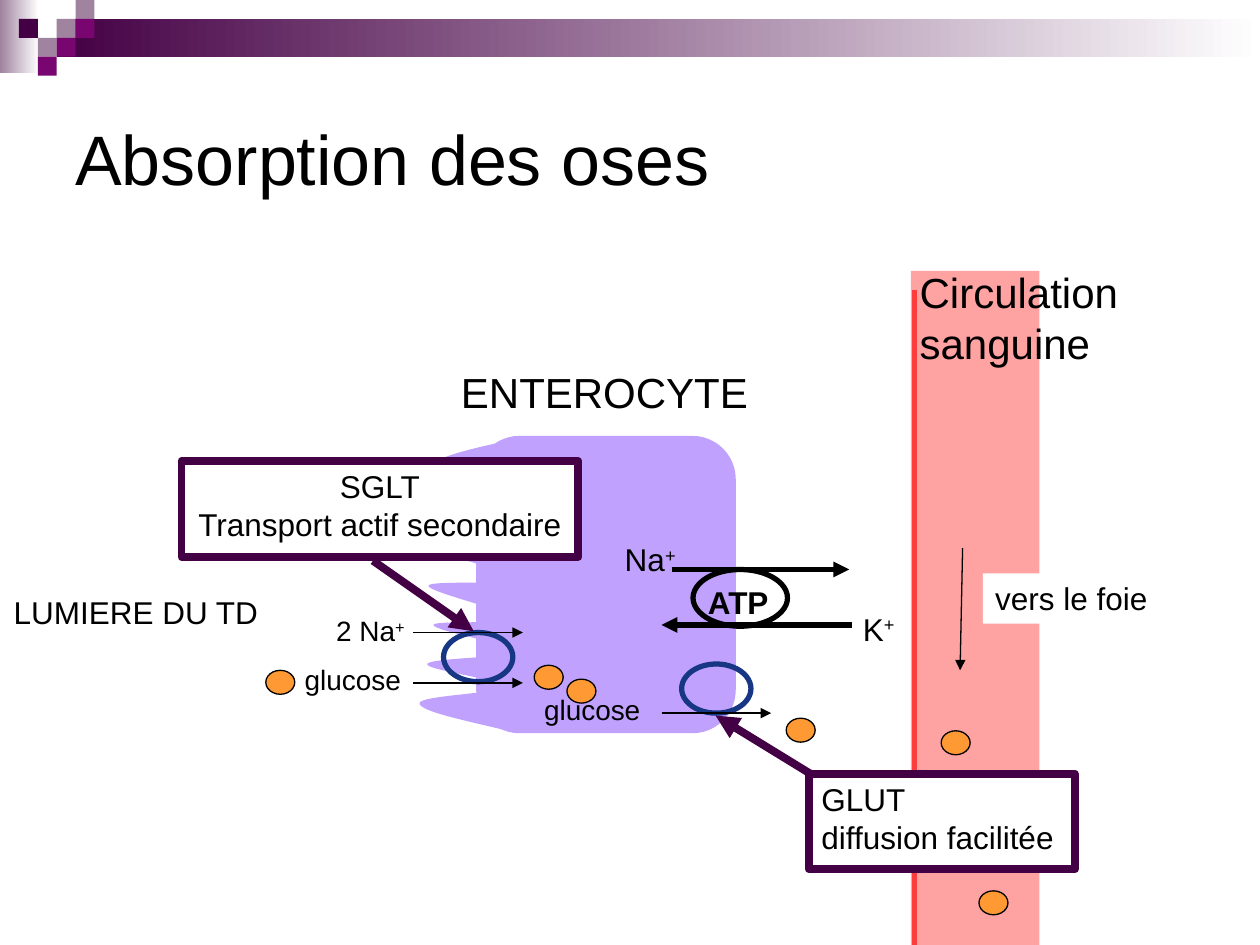
from dataclasses import dataclass
from typing import Optional

from lxml import etree
from pptx import Presentation
from pptx import util as u
from pptx.dml.color import RGBColor
from pptx.enum import shapes, text
from pptx.oxml import ns

BLACK = RGBColor(0x00, 0x00, 0x00)
WHITE = RGBColor(0xFF, 0xFF, 0xFF)
PLUM = RGBColor(0x44, 0x00, 0x44)
MAGENTA = RGBColor(0x79, 0x05, 0x71)
MAUVE = RGBColor(0x9F, 0x83, 0x9F)
LILAC = RGBColor(0xC0, 0xA1, 0xFD)
RED = RGBColor(0xFF, 0x00, 0x00)
PINK = RGBColor(0xFF, 0x65, 0x65)
NAVY = RGBColor(0x17, 0x36, 0x83)
ORANGE = RGBColor(0xFF, 0x99, 0x33)

FONT = "Arial"
PIXEL = 1.5
RECT = shapes.MSO_SHAPE.RECTANGLE
OVAL = shapes.MSO_SHAPE.OVAL

deck = Presentation()
deck.slide_width, deck.slide_height = u.Inches(10), u.Inches(7.5)
CELL = deck.slide_width / 100
slide = deck.slides.add_slide(deck.slide_layouts[6])


@dataclass(frozen=True)
class Box:
    col: float
    row: float
    cols: float
    rows: float

    def emu(self) -> list[int]:
        return [grid(n) for n in (self.col, self.row, self.cols, self.rows)]


@dataclass(frozen=True)
class Label:
    box: Box
    lines: tuple[str, ...]
    size: int = 18
    superscript: str = ""
    bold: bool = False
    wrap: bool = False
    grow: bool = True
    anchor: text.MSO_ANCHOR = text.MSO_ANCHOR.TOP
    align: text.PP_ALIGN = text.PP_ALIGN.LEFT


@dataclass(frozen=True)
class Arrow:
    start: tuple[float, float]
    end: tuple[float, float]
    width: float = 0.75
    color: RGBColor = BLACK
    head: bool = True


def grid(cells: float) -> int:
    return round(cells * CELL)


def paint(shape, fill: Optional[RGBColor], line: Optional[RGBColor], width: float):
    shape.shadow.inherit = False
    if fill is None:
        shape.fill.background()
    else:
        shape.fill.solid()
        shape.fill.fore_color.rgb = fill
    if line is None:
        shape.line.fill.background()
    else:
        shape.line.color.rgb = line
        shape.line.width = u.Pt(width)
    return shape


def draw_shape(kind, box: Box, fill: Optional[RGBColor] = None,
               line: Optional[RGBColor] = None, width: float = 0.75):
    return paint(slide.shapes.add_shape(kind, *box.emu()), fill, line, width)


def draw_fade(box: Box, color: RGBColor) -> None:
    band = draw_shape(RECT, box)
    band.fill.gradient()
    band.fill.gradient_angle = 0
    for stop, shade in zip(band.fill.gradient_stops, (color, WHITE)):
        stop.color.rgb = shade


def write(shape, label: Label) -> None:
    frame = shape.text_frame
    frame.word_wrap = label.wrap
    frame.vertical_anchor = label.anchor
    if label.grow:
        frame.auto_size = text.MSO_AUTO_SIZE.SHAPE_TO_FIT_TEXT
    for index, line in enumerate(label.lines):
        paragraph = frame.add_paragraph() if index else frame.paragraphs[0]
        paragraph.alignment = label.align
        for words in filter(None, (line, label.superscript)):
            run = paragraph.add_run()
            run.text = words
            run.font.name = FONT
            run.font.size = u.Pt(label.size)
            run.font.bold = label.bold
            run.font.color.rgb = BLACK
            if words == label.superscript:
                run.font._element.set("baseline", "30000")


def draw_label(label: Label) -> None:
    write(slide.shapes.add_textbox(*label.box.emu()), label)


def draw_plate(label: Label, line: Optional[RGBColor] = None):
    plate = draw_shape(RECT, label.box, WHITE, line, 4.5)
    write(plate, label)
    return plate


def draw_arrow(arrow: Arrow):
    ends = [grid(n) for n in arrow.start + arrow.end]
    connector = slide.shapes.add_connector(shapes.MSO_CONNECTOR.STRAIGHT, *ends)
    connector.line.color.rgb = arrow.color
    connector.line.width = u.Pt(arrow.width)
    if arrow.head:
        etree.SubElement(connector.line._get_or_add_ln(), ns.qn("a:tailEnd"), type="triangle")
    etree.SubElement(connector._element.spPr, ns.qn("a:effectLst"))
    return connector


def draw_villi(knots) -> None:
    start, *controls = [(round(x * 10), round(y * 10)) for x, y in knots]
    builder = slide.shapes.build_freeform(*start, scale=CELL / 10)
    builder.add_line_segments(controls, close=True)
    villi = paint(builder.convert_to_shape(), LILAC, None, 0)
    segments = list(villi._element.iter(ns.qn("a:lnTo")))
    for first in range(0, len(segments), 3):
        curve = etree.Element(ns.qn("a:cubicBezTo"))
        segments[first].addprevious(curve)
        for segment in segments[first:first + 3]:
            curve.append(segment[0])
            segment.getparent().remove(segment)


draw_fade(Box(0, 0, 3.1, 5.8), MAUVE)
draw_fade(Box(4.5, 1.5, 95.5, 3), PLUM)
for column, row, shade in ((3, 1, MAUVE), (4, 0, MAUVE), (4, 1, MAGENTA), (2, 2, MAUVE),
                           (1, 1, PLUM), (3, 2, MAGENTA), (2, 3, MAGENTA)):
    draw_shape(RECT, Box(column * PIXEL, row * PIXEL, PIXEL, PIXEL), shade)

draw_villi((
    (39.9, 57.9), (36.5, 57.1), (33.2, 56.4), (33.3, 55.8), (33.3, 55.2), (40, 55), (40.1, 54.5),
    (40.2, 54), (33.8, 53.2), (33.9, 52.7), (34.1, 52.2), (40.9, 52.2), (41, 51.7),
    (41, 51.2), (34.4, 50.1), (34.4, 49.6), (34.4, 49.2), (41, 49.6), (40.9, 49.1),
    (40.8, 48.6), (34, 47), (34, 46.5), (34, 46), (40.9, 46.5), (41, 46),
    (41, 45.4), (34.2, 43.9), (34.2, 43.4), (34.2, 42.8), (41, 43), (41, 42.6),
    (41.1, 42.1), (34.4, 41.2), (34.4, 40.5), (34.5, 39.9), (41.3, 39.3), (41.3, 38.7),
    (41.3, 38.1), (34.5, 37.5), (34.5, 36.9), (34.4, 36.3), (37.8, 35.5), (41.2, 34.8)))

draw_arrow(Arrow((72.6, 23), (72.6, 75), 3, RED, head=False))
vessel = draw_shape(RECT, Box(72.3, 21.5, 10.2, 53.5), PINK)
vessel_color = vessel._element.spPr.find(".//" + ns.qn("a:srgbClr"))
etree.SubElement(vessel_color, ns.qn("a:alpha"), val="60000")

draw_label(Label(Box(5, 5, 90, 15), ("Absorption des oses",), 40, wrap=True, grow=False,
                 anchor=text.MSO_ANCHOR.MIDDLE))
enterocyte = draw_shape(shapes.MSO_SHAPE.ROUNDED_RECTANGLE, Box(37.8, 34.6, 20.6, 23.6), LILAC)
enterocyte.adjustments[0] = 0.167

for label in (
    Label(Box(67.5, 47.9, 4.7, 4), ("K",), superscript="+"),
    Label(Box(48.6, 42.4, 6.2, 4), ("Na",), superscript="+"),
    Label(Box(55.2, 45.8, 7, 4), ("ATP",), bold=True),
    Label(Box(25.7, 48.2, 7.6, 3.7), ("2 Na",), 16, superscript="+"),
    Label(Box(23.2, 52.1, 9.7, 3.7), ("glucose",), 16),
    Label(Box(42.2, 54.5, 9.7, 3.7), ("glucose",), 16),
    Label(Box(0.1, 46.6, 21.5, 4), ("LUMIERE DU TD",)),
    Label(Box(72, 20.7, 22.2, 9), ("Circulation sanguine",), 24, wrap=True),
    Label(Box(35.6, 28.6, 24.8, 5), ("ENTEROCYTE",), 24),
):
    draw_label(label)

for pore, color in ((Box(55, 45.2, 7.5, 4.5), BLACK), (Box(35.2, 50.2, 5.5, 3.9), NAVY),
                    (Box(54.1, 52.7, 5.5, 3.9), NAVY)):
    draw_shape(OVAL, pore, line=color, width=3)

for flow in (
    Arrow((67.6, 49.6), (52.5, 49.6), 3),
    Arrow((53.3, 45.2), (67.4, 45.2), 3),
    Arrow((32.8, 50.2), (41.5, 50.2)),
    Arrow((32.8, 54.2), (41.5, 54.2)),
    Arrow((52.5, 56.6), (61.2, 56.6)),
    Arrow((76.4, 43.5), (76.2, 53.2)),
):
    draw_arrow(flow)

draw_plate(Label(Box(14.4, 36.6, 31.5, 7.6), ("SGLT", "Transport actif secondaire"),
                 align=text.PP_ALIGN.CENTER), PLUM)
draw_arrow(Arrow((29.6, 44.5), (37.6, 50.1), 4.5, PLUM))
draw_plate(Label(Box(64.2, 61.4, 21.1, 7.6), ("GLUT", "diffusion facilitée")), PLUM)
draw_arrow(Arrow((64.3, 61.4), (56.8, 56.8), 4.5, PLUM))

for column, row in ((21.1, 53.2), (42.4, 52.8), (45, 53.9), (62.4, 57), (74.7, 58), (77.7, 70.7)):
    draw_shape(OVAL, Box(column, row, 2.3, 1.9), ORANGE, BLACK)
draw_plate(Label(Box(78, 45.5, 14.1, 4), ("vers le foie",)))

deck.save("out.pptx")
